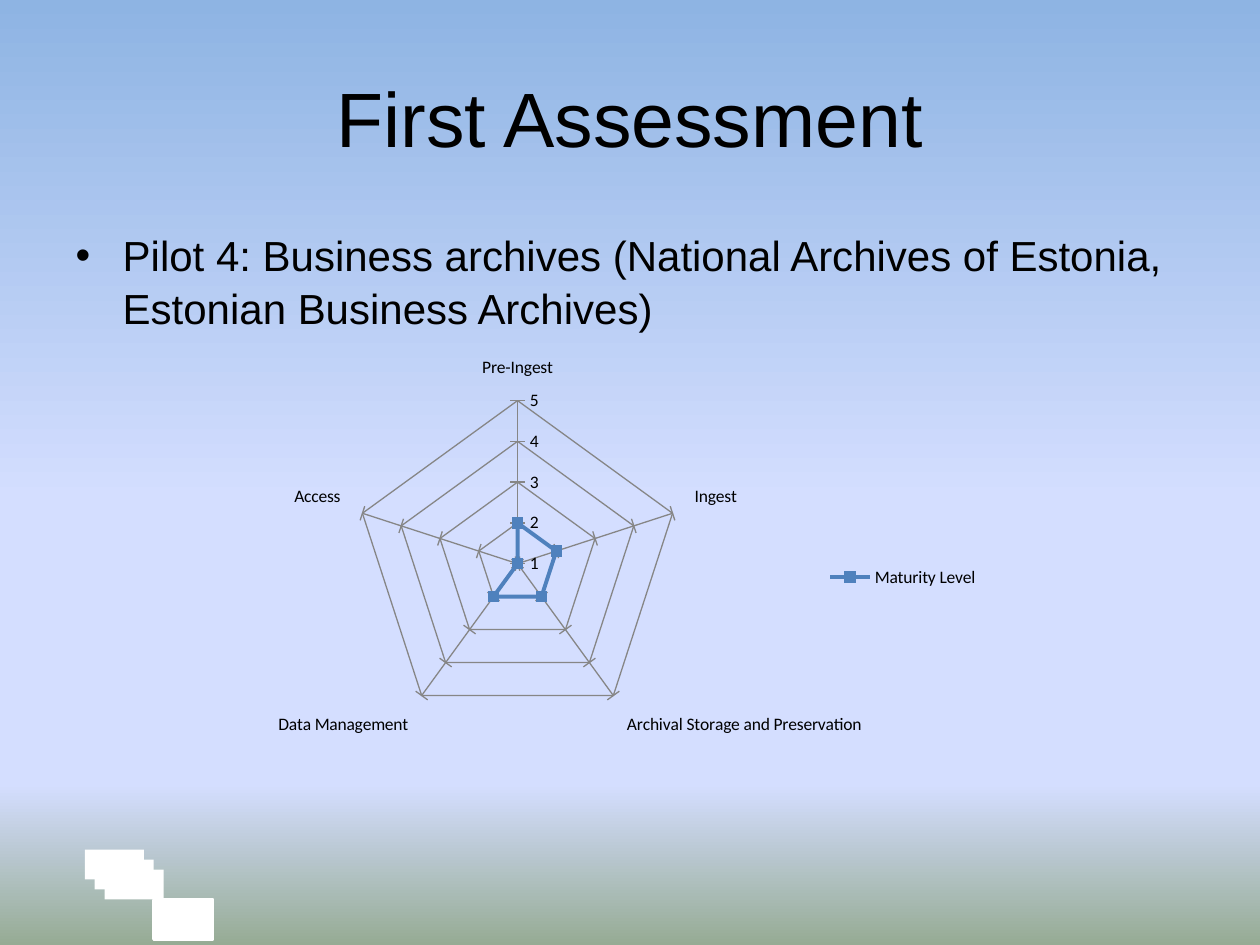
"""Build the First Assessment slide with its maturity radar chart."""
from lxml import etree
from pptx import Presentation
from pptx import util as u
from pptx.chart import data
from pptx.dml import color
from pptx.enum import chart as kinds, shapes, text
from pptx.oxml import ns

COLORS = {"sky": "8EB4E3", "haze": "D4DEFF", "field": "96AB94", "ink": "000000",
          "block": "FFFFFF", "grid": "868686", "series": "4F81BD"}


def rgb(name):
    return color.RGBColor.from_string(COLORS[name])


def add_element(parent, tag, **values):
    element = etree.SubElement(parent, ns.qn(tag))
    for key, value in values.items():
        element.set(key, str(value))
    return element


deck = Presentation()
deck.slide_width, deck.slide_height = u.Cm(25.4), u.Cm(19.05)
page = deck.slides.add_slide(deck.slide_layouts[1])

backdrop = page.background.fill
backdrop.gradient()
backdrop.gradient_angle = 270
stops = page.background._cSld.find(".//" + ns.qn("a:gsLst"))
for stop in list(stops):
    stops.remove(stop)
for percent, name in ((0, "sky"), (53, "haze"), (83, "haze"), (100, "field")):
    stop = add_element(stops, "a:gs", pos=percent * 1000)
    add_element(stop, "a:srgbClr", val=COLORS[name])

blocks = [(3.1, 18.14, 1.19, 0.79)]
blocks += [(2.11 - 0.2 * step, 17.53 - 0.2 * step, 1.19, 0.6) for step in range(3)]
for index, place in enumerate(blocks):
    block = page.shapes.add_shape(shapes.MSO_SHAPE.RECTANGLE, *map(u.Cm, place))
    block.shadow.inherit = False
    block.fill.solid()
    block.fill.fore_color.rgb = rgb("block")
    if index == 0:
        block.line.color.rgb = rgb("block")
        block.line.width = u.Pt(2)
    else:
        block.line.fill.background()

title, body = page.placeholders
wordings = (
    (title, "First Assessment", (1.27, 0.76, 22.86, 3.18), 44,
     text.MSO_ANCHOR.MIDDLE, {"alignment": text.PP_ALIGN.CENTER}),
    (body, "Pilot 4: Business archives (National Archives of Estonia, Estonian Business Archives)",
     (1.27, 4.45, 22.86, 12.57), 24, text.MSO_ANCHOR.TOP,
     {"alignment": text.PP_ALIGN.LEFT, "line_spacing": 1.05, "space_before": u.Pt(0)}),
)
for box, wording, place, size, anchor, layout in wordings:
    for name, length in zip(("left", "top", "width", "height"), place):
        setattr(box, name, u.Cm(length))
    frame = box.text_frame
    frame.word_wrap = True
    frame.auto_size = text.MSO_AUTO_SIZE.NONE
    frame.vertical_anchor = anchor
    para = frame.paragraphs[0]
    for name, value in layout.items():
        setattr(para, name, value)
    span = para.add_run()
    span.text = wording
    for name, value in {"size": u.Pt(size), "name": "Arial"}.items():
        setattr(span.font, name, value)
    span.font.color.rgb = rgb("ink")

bullet = body.text_frame.paragraphs[0]._p.get_or_add_pPr()
bullet.set("marL", str(u.Cm(0.95)))
bullet.set("indent", str(-u.Cm(0.95)))
add_element(bullet, "a:buFont", typeface="Arial")
add_element(bullet, "a:buChar", char="•")

maturity = data.CategoryChartData()
maturity.categories = ["Pre-Ingest", "Ingest", "Archival Storage and Preservation",
                       "Data Management", "Access"]
maturity.add_series("Maturity Level", (2, 2, 2, 2, 1))
radar = page.shapes.add_chart(kinds.XL_CHART_TYPE.RADAR_MARKERS, u.Cm(4.7), u.Cm(7.14),
                              u.Cm(15.29), u.Cm(8.99), maturity).chart
radar.has_title = False
radar.font.size, radar.font.name = u.Pt(10), "Calibri"
radar.font.color.rgb = rgb("ink")
radar.has_legend = True
radar.legend.position = kinds.XL_LEGEND_POSITION.RIGHT
radar.legend.include_in_layout = False
radar.plots[0].vary_by_categories = False

for name, value in {"minimum_scale": 1, "maximum_scale": 5, "major_unit": 1}.items():
    setattr(radar.value_axis, name, value)
for axis, tick in ((radar.category_axis, kinds.XL_TICK_MARK.OUTSIDE),
                   (radar.value_axis, kinds.XL_TICK_MARK.CROSS)):
    axis.has_major_gridlines = True
    axis.major_tick_mark = tick
    axis.minor_tick_mark = kinds.XL_TICK_MARK.NONE
    for line in (axis.format.line, axis.major_gridlines.format.line):
        line.color.rgb = rgb("grid")
        line.width = u.Pt(0.75)
radar.value_axis.tick_labels.number_format = "General"
radar.value_axis.tick_labels.number_format_is_linked = False

series = radar.plots[0].series[0]
series.smooth = False
series.format.line.color.rgb = rgb("series")
series.format.line.width = u.Pt(2.25)
series.marker.style = kinds.XL_MARKER_STYLE.SQUARE
series.marker.size = 6
series.marker.format.fill.solid()
series.marker.format.fill.fore_color.rgb = rgb("series")
series.marker.format.line.color.rgb = rgb("series")

area = radar._chartSpace.chart.plotArea
for old in area.findall(ns.qn("c:layout")):
    area.remove(old)
layout = add_element(area, "c:layout")
area.insert(0, layout)
manual = add_element(layout, "c:manualLayout")
for tag, value in (("layoutTarget", "inner"), ("xMode", "edge"), ("yMode", "edge"),
                   ("x", 0.16), ("y", 0.08), ("w", 0.43), ("h", 0.78)):
    add_element(manual, "c:" + tag, val=value)

deck.save("out.pptx")
